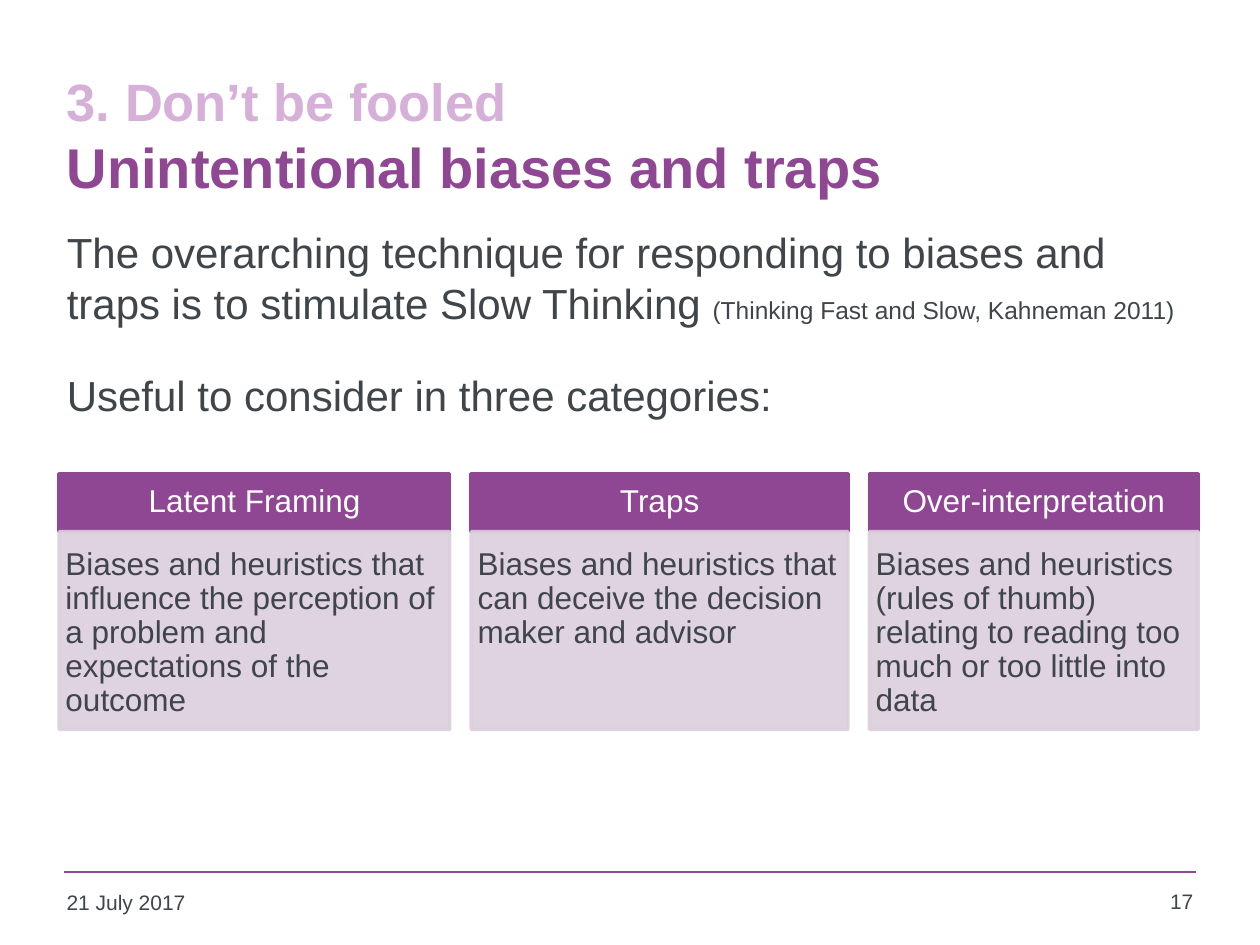
from pptx import Presentation
from pptx.dml.color import RGBColor
from pptx.enum.shapes import MSO_CONNECTOR, MSO_SHAPE
from pptx.enum.text import MSO_ANCHOR, MSO_AUTO_SIZE, PP_ALIGN
from pptx.oxml.ns import qn
from pptx.util import Inches, Pt
from lxml import etree

LEFT, CENTER, RIGHT = PP_ALIGN.LEFT, PP_ALIGN.CENTER, PP_ALIGN.RIGHT
TOP, MIDDLE = MSO_ANCHOR.TOP, MSO_ANCHOR.MIDDLE
RECTANGLE, STRAIGHT = MSO_SHAPE.RECTANGLE, MSO_CONNECTOR.STRAIGHT
PURPLE, LILAC, PALE, DARK, WHITE = "8F4693", "D7B0D9", "DBCFDC", "3F4548", "FFFFFF"


def color(hex_string):
    return RGBColor.from_string(hex_string)


def add_run(paragraph, text, size, hex_string, bold=False):
    run = paragraph.add_run()
    run.text = text
    run.font.name = "Arial"
    run.font.size = Pt(size)
    run.font.bold = bold
    run.font.color.rgb = color(hex_string)


presentation = Presentation()
presentation.slide_width, presentation.slide_height = Inches(10), Inches(7.5)
slide = presentation.slides.add_slide(presentation.slide_layouts[1])
title, body = slide.shapes.title, slide.placeholders[1]
margin, content_width = 0.43, 9.07

# Title and body placeholders
for placeholder, top, height, anchor in ((title, 0.44, 1.25, MIDDLE), (body, 1.75, 5.07, TOP)):
    placeholder.left, placeholder.top = Inches(margin), Inches(top)
    placeholder.width, placeholder.height = Inches(content_width), Inches(height)
    placeholder.text_frame.auto_size = MSO_AUTO_SIZE.NONE
    placeholder.text_frame.vertical_anchor = anchor

paragraph = title.text_frame.paragraphs[0]
paragraph.alignment = LEFT
add_run(paragraph, "3. Don’t be fooled", 30, LILAC, True)
paragraph.add_line_break()
add_run(paragraph, "Unintentional biases and traps", 32, PURPLE, True)

introduction = body.text_frame.paragraphs[0]
lead_in = body.text_frame.add_paragraph()
for paragraph, space in ((introduction, 3), (lead_in, 24)):
    paragraph.space_before = Pt(space)
    properties = paragraph._p.get_or_add_pPr()
    properties.set("marL", "0")
    properties.set("indent", "0")
    etree.SubElement(properties, qn("a:buNone"))
add_run(introduction, "The overarching technique for responding to biases and traps "
        "is to stimulate Slow Thinking ", 24, DARK)
add_run(introduction, "(Thinking Fast and Slow, Kahneman 2011)", 14, DARK)
add_run(lead_in, "Useful to consider in three categories:", 24, DARK)

# Three category cards: a header bar above a description
categories = (
    (3.1, "Latent Framing", "Biases and heuristics that influence the perception "
     "of a problem and expectations of the outcome"),
    (2.99, "Traps", "Biases and heuristics that can deceive the decision maker and advisor"),
    (2.61, "Over-interpretation", "Biases and heuristics (rules of thumb) relating to "
     "reading too much or too little into data"),
)
card_top, header_height, description_height, gap = 3.76, 0.46, 1.57, 0.17
left = 0.47
for width, heading, description in categories:
    parts = (
        (heading, card_top, header_height, PURPLE, WHITE, CENTER, MIDDLE, (0.09, 0.05, 0.09, 0.05)),
        (description, card_top + header_height, description_height, PALE, DARK, LEFT, TOP,
         (0.05, 0.13, 0.06, 0.07)),
    )
    for text, top, height, fill, text_color, alignment, anchor, insets in parts:
        shape = slide.shapes.add_shape(RECTANGLE, Inches(left), Inches(top), Inches(width), Inches(height))
        shape.shadow.inherit = False
        shape.fill.solid()
        shape.fill.fore_color.rgb = color(fill)
        shape.line.color.rgb = color(fill)
        shape.line.width = Pt(2)
        if fill == PALE:
            for element in shape._element.spPr.iter(qn("a:srgbClr")):
                etree.SubElement(element, qn("a:alpha")).set("val", "90000")
        frame = shape.text_frame
        frame.word_wrap = True
        frame.vertical_anchor = anchor
        frame.margin_left, frame.margin_top, frame.margin_right, frame.margin_bottom = map(Inches, insets)
        paragraph = frame.paragraphs[0]
        paragraph.alignment = alignment
        paragraph.line_spacing = 0.9
        add_run(paragraph, text, 18, text_color)
    left += width + gap

# Footer rule, date and page number
rule = slide.shapes.add_connector(STRAIGHT, Inches(0.51), Inches(6.92), Inches(9.49), Inches(6.92))
rule.line.color.rgb = color(PURPLE)
rule.line.width = Pt(1)
etree.SubElement(rule._element.spPr, qn("a:effectLst"))
for text, left, top, width, alignment in (("21 July 2017", margin, 7.01, 2.2, LEFT),
                                          ("17", 8.86, 7, 0.71, RIGHT)):
    box = slide.shapes.add_textbox(Inches(left), Inches(top), Inches(width), Inches(0.36))
    box.text_frame.word_wrap = True
    paragraph = box.text_frame.paragraphs[0]
    paragraph.alignment = alignment
    add_run(paragraph, text, 12, DARK)

presentation.save("out.pptx")
